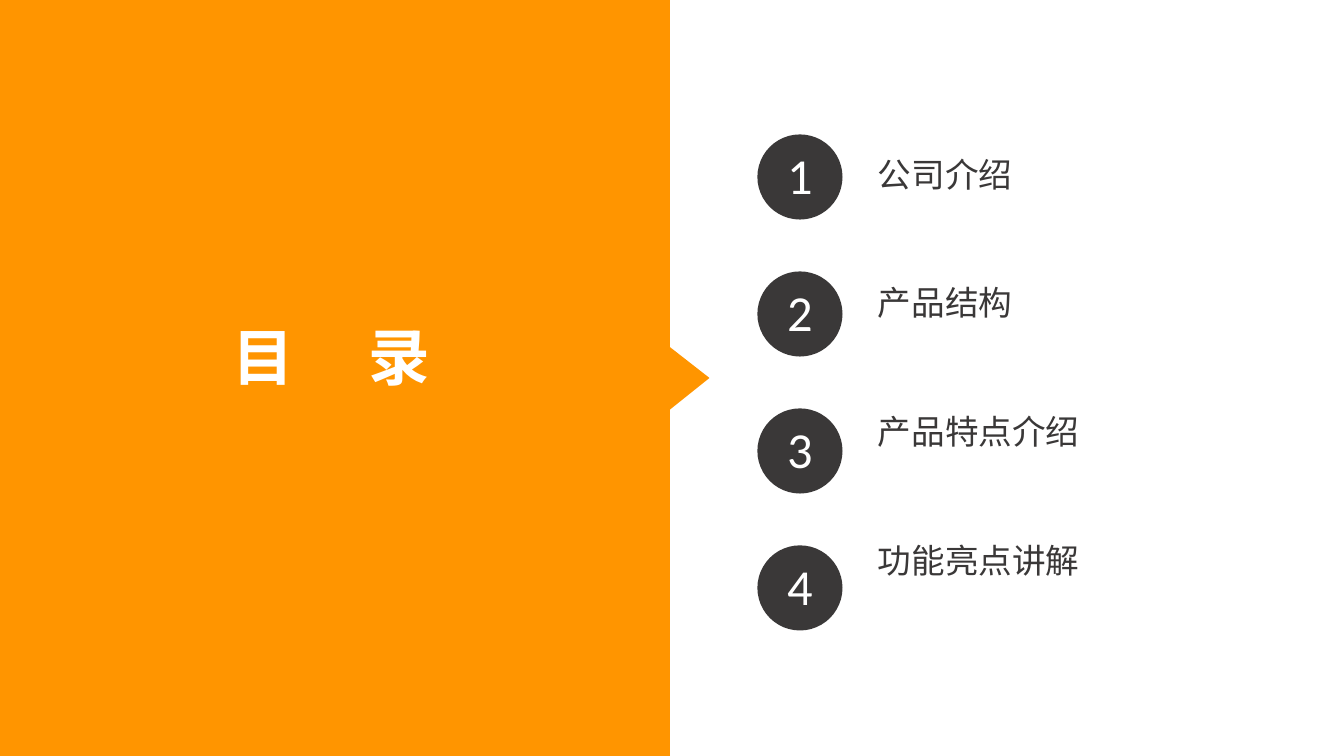
from dataclasses import dataclass

from lxml import etree
from pptx import Presentation
from pptx.dml.color import RGBColor
from pptx.enum.shapes import MSO_SHAPE
from pptx.enum.text import MSO_ANCHOR, MSO_AUTO_SIZE, PP_ALIGN
from pptx.oxml.ns import qn
from pptx.util import Pt

OVAL, RECTANGLE = MSO_SHAPE.OVAL, MSO_SHAPE.RECTANGLE
TOP, MIDDLE = MSO_ANCHOR.TOP, MSO_ANCHOR.MIDDLE
LEFT, CENTER = PP_ALIGN.LEFT, PP_ALIGN.CENTER
NO_AUTOFIT = MSO_AUTO_SIZE.NONE

COLORS = {"orange": "FF9500", "dark": "3A3838", "white": "FFFFFF"}
CJK_FONT, NUMBER_FONT = "Noto Sans CJK SC", "Calibri"

SLIDE_WIDTH, SLIDE_HEIGHT = 960, 540
PANEL_WIDTH = 478.5
POINTER = [(478, 247.5), (506.8, 270), (478, 293)]
CIRCLE_LEFT, CIRCLE_TOP, CIRCLE_SIZE = 541, 96, 60.8
ROW_PITCH, LINE_HEIGHT = 97.85, 34.75
TITLE_TAB = 97.2
CHAPTERS = ["公司介绍", "产品结构", "产品特点介绍", "功能亮点讲解"]


@dataclass(frozen=True)
class Box:
    left: float
    top: float
    width: float
    height: float

    def lengths(self) -> list:
        return [Pt(v) for v in (self.left, self.top, self.width, self.height)]


@dataclass(frozen=True)
class TextStyle:
    font: str
    size: float
    color: str
    bold: bool = False
    align: PP_ALIGN = LEFT


TITLE_BOX = Box(166.3, 227.5, 160, 54)
CHAPTERS_BOX = Box(627.1, 109.7, 260, 3 * ROW_PITCH + LINE_HEIGHT)
TITLE_STYLE = TextStyle(CJK_FONT, 44, "white", bold=True)
CHAPTER_STYLE = TextStyle(CJK_FONT, 24, "dark")
NUMBER_STYLE = TextStyle(NUMBER_FONT, 36, "white", align=CENTER)


def rgb(name: str) -> RGBColor:
    return RGBColor.from_string(COLORS[name])


def paint(shape, color: str) -> None:
    shape.shadow.inherit = False
    shape.fill.solid()
    shape.fill.fore_color.rgb = rgb(color)
    shape.line.fill.background()


def place(placeholder, box: Box) -> None:
    (placeholder.left, placeholder.top,
     placeholder.width, placeholder.height) = box.lengths()


def set_frame(frame, anchor: MSO_ANCHOR, bottom: float = 0) -> None:
    frame.word_wrap = True
    frame.auto_size = NO_AUTOFIT
    frame.vertical_anchor = anchor
    frame.margin_left = frame.margin_right = frame.margin_top = 0
    frame.margin_bottom = Pt(bottom)


def style_paragraph(paragraph, style: TextStyle, space_before: float = 0) -> None:
    paragraph.alignment = style.align
    paragraph.space_before = Pt(space_before)
    font = paragraph.font
    font.name, font.size, font.bold = style.font, Pt(style.size), style.bold
    font.color.rgb = rgb(style.color)
    defaults = paragraph._p.pPr.find(qn("a:defRPr"))
    etree.SubElement(defaults, qn("a:ea"), typeface=style.font)


def add_panel(slide) -> None:
    panel = slide.shapes.add_shape(
        RECTANGLE, *Box(0, 0, PANEL_WIDTH, SLIDE_HEIGHT).lengths())
    paint(panel, "orange")
    start, *others = [(Pt(x), Pt(y)) for x, y in POINTER]
    outline = slide.shapes.build_freeform(*start)
    outline.add_line_segments(others, close=True)
    paint(outline.convert_to_shape(), "orange")


def add_title(slide) -> None:
    title = slide.shapes.title
    place(title, TITLE_BOX)
    set_frame(title.text_frame, MIDDLE)
    paragraph = title.text_frame.paragraphs[0]
    paragraph.text = "目\t录"
    tabs = etree.SubElement(paragraph._p.get_or_add_pPr(), qn("a:tabLst"))
    etree.SubElement(tabs, qn("a:tab"), pos=str(Pt(TITLE_TAB)), algn="l")
    style_paragraph(paragraph, TITLE_STYLE)
    # Bring the title in front of the panel
    slide.shapes._spTree.append(title._element)


def add_chapters(slide) -> None:
    chapters = slide.placeholders[1]
    place(chapters, CHAPTERS_BOX)
    frame = chapters.text_frame
    set_frame(frame, TOP)
    for row, name in enumerate(CHAPTERS):
        paragraph = frame.add_paragraph() if row else frame.paragraphs[0]
        paragraph.text = name
        properties = paragraph._p.get_or_add_pPr()
        properties.set("marL", "0")
        properties.set("indent", "0")
        etree.SubElement(properties, qn("a:buNone"))
        style_paragraph(paragraph, CHAPTER_STYLE,
                        ROW_PITCH - LINE_HEIGHT if row else 0)


def add_number(slide, row: int) -> None:
    box = Box(CIRCLE_LEFT, CIRCLE_TOP + row * ROW_PITCH, CIRCLE_SIZE, CIRCLE_SIZE)
    circle = slide.shapes.add_shape(OVAL, *box.lengths())
    paint(circle, "dark")
    set_frame(circle.text_frame, MIDDLE, bottom=4)
    paragraph = circle.text_frame.paragraphs[0]
    paragraph.text = str(row + 1)
    style_paragraph(paragraph, NUMBER_STYLE)


def main() -> None:
    deck = Presentation()
    deck.slide_width, deck.slide_height = Pt(SLIDE_WIDTH), Pt(SLIDE_HEIGHT)
    slide = deck.slides.add_slide(deck.slide_layouts[1])

    # Left half: orange panel with its pointer and the title
    add_panel(slide)
    add_title(slide)

    # Right half: numbered chapters
    add_chapters(slide)
    for row in range(len(CHAPTERS)):
        add_number(slide, row)

    deck.save("out.pptx")


if __name__ == "__main__":
    main()
